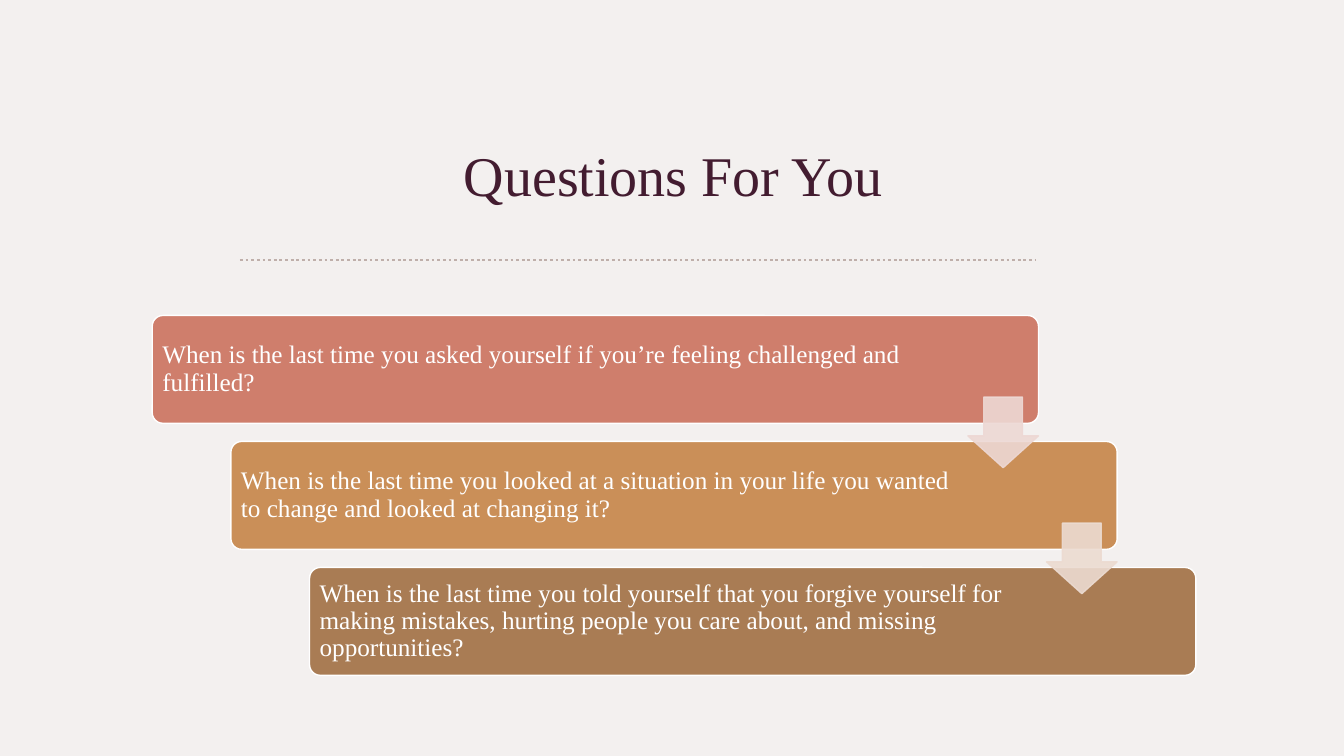
from lxml.etree import SubElement
from pptx import Presentation
from pptx.dml.color import RGBColor
from pptx.enum.dml import MSO_LINE
from pptx.enum.shapes import MSO_CONNECTOR, MSO_SHAPE
from pptx.enum.text import MSO_ANCHOR, PP_ALIGN
from pptx.oxml.ns import qn
from pptx.util import Pt

PX = 9144  # EMU in one px, 100 px to the inch

PAPER = RGBColor(0xF3, 0xF0, 0xEF)
PLUM = RGBColor(0x43, 0x1C, 0x30)
TAUPE = RGBColor(0xBF, 0xAF, 0xAA)
WHITE = RGBColor(0xFF, 0xFF, 0xFF)
CORAL = RGBColor(0xCF, 0x7E, 0x6C)
OCHRE = RGBColor(0xCA, 0x8F, 0x58)
BROWN = RGBColor(0xA9, 0x7C, 0x54)
PALE_CORAL = RGBColor(0xED, 0xD8, 0xD4)
PALE_OCHRE = RGBColor(0xEC, 0xDB, 0xD1)

TITLE = {"size": Pt(40), "color": PLUM, "align": PP_ALIGN.CENTER, "inset": 10, "spacing": 1.0}
QUESTION = {"size": Pt(18), "color": WHITE, "align": PP_ALIGN.LEFT, "inset": 7, "spacing": 0.9}

CARD_LEFT, CARD_TOP = 151, 313
CARD_WIDTH, CARD_HEIGHT = 879, 107
STEP_X, STEP_Y = 78, 125
ARROW_SIZE = 70

# Question, card colour, text width
QUESTIONS = [
    ("When is the last time you asked yourself if you’re feeling challenged and fulfilled?",
     CORAL, 764),
    ("When is the last time you looked at a situation in your life you wanted to change "
     "and looked at changing it?", OCHRE, 726),
    ("When is the last time you told yourself that you forgive yourself for making mistakes, "
     "hurting people you care about, and missing opportunities?", BROWN, 726),
]
ARROW_COLORS = [PALE_CORAL, PALE_OCHRE]


class SlideBuilder:
    font_name = "Times New Roman"

    def __init__(self, slide, background):
        self.slide = slide
        slide.background.fill.solid()
        slide.background.fill.fore_color.rgb = background

    def text(self, left, top, width, height, words, style):
        box = self.slide.shapes.add_textbox(left * PX, top * PX, width * PX, height * PX)
        frame = box.text_frame
        frame.word_wrap = True
        frame.vertical_anchor = MSO_ANCHOR.MIDDLE
        for side in ("left", "top", "right", "bottom"):
            setattr(frame, f"margin_{side}", style["inset"] * PX)
        para = frame.paragraphs[0]
        for name, value in {"alignment": style["align"], "line_spacing": style["spacing"]}.items():
            setattr(para, name, value)
        span = para.add_run()
        span.text = words
        for name, value in {"name": self.font_name, "size": style["size"]}.items():
            setattr(span.font, name, value)
        span.font.color.rgb = style["color"]

    def shape(self, kind, left, top, width, height, fill, outline, adjustments, opacity=100):
        """Draw a preset shape; opacity is a percentage for fill and outline."""
        shape = self.slide.shapes.add_shape(kind, left * PX, top * PX, width * PX, height * PX)
        shape.shadow.inherit = False
        for index, value in enumerate(adjustments):
            shape.adjustments[index] = value
        shape.fill.solid()
        shape.fill.fore_color.rgb = fill
        shape.line.color.rgb = outline
        shape.line.width = Pt(1)
        if opacity < 100:
            for color in shape.element.spPr.iter(qn("a:srgbClr")):
                SubElement(color, qn("a:alpha"), val=str(opacity * 1000))

    def dotted_rule(self, left, right, top, color):
        rule = self.slide.shapes.add_connector(
            MSO_CONNECTOR.STRAIGHT, left * PX, top * PX, right * PX, top * PX)
        rule.line.color.rgb = color
        for name, value in {"width": Pt(2), "dash_style": MSO_LINE.ROUND_DOT}.items():
            setattr(rule.line, name, value)
        SubElement(rule.element.spPr, qn("a:effectLst"))


def main():
    deck = Presentation()
    deck.slide_width, deck.slide_height = 1333 * PX, 750 * PX
    page = SlideBuilder(deck.slides.add_slide(deck.slide_layouts[6]), PAPER)

    page.text(105, 103, 1125, 140, "Questions For You", TITLE)
    page.dotted_rule(238, 1027, 258, TAUPE)

    for step, (question, color, text_width) in enumerate(QUESTIONS):
        left, top = CARD_LEFT + step * STEP_X, CARD_TOP + step * STEP_Y
        page.shape(MSO_SHAPE.ROUNDED_RECTANGLE, left, top, CARD_WIDTH, CARD_HEIGHT,
                   color, WHITE, [0.1])
        page.text(left + 3, top + 3, text_width, CARD_HEIGHT - 6, question, QUESTION)

    for step, color in enumerate(ARROW_COLORS):
        left = CARD_LEFT + step * STEP_X + CARD_WIDTH - ARROW_SIZE
        top = CARD_TOP + step * STEP_Y + 81
        page.shape(MSO_SHAPE.DOWN_ARROW, left, top, ARROW_SIZE, ARROW_SIZE,
                   color, color, [0.55, 0.45], opacity=90)

    deck.save("out.pptx")


if __name__ == "__main__":
    main()
